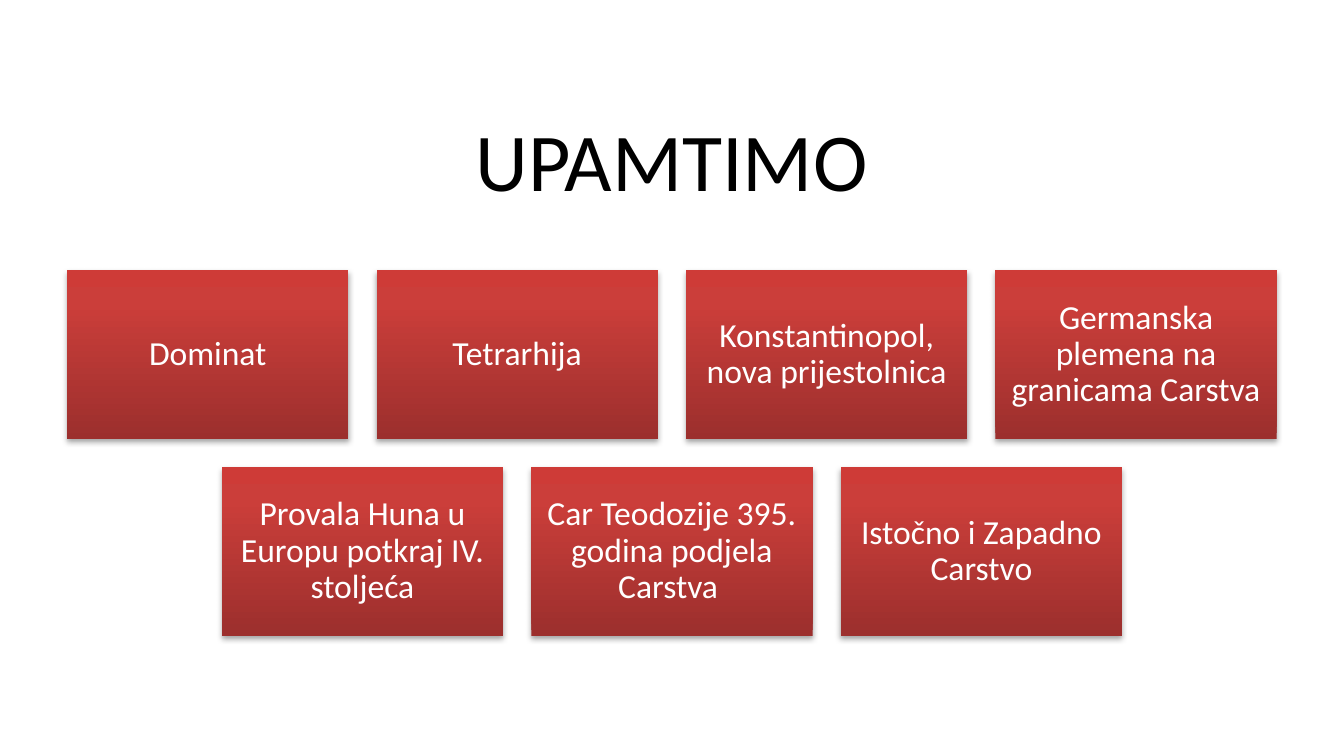
from dataclasses import dataclass

from pptx import Presentation
from pptx.dml.color import RGBColor
from pptx.enum.shapes import MSO_SHAPE
from pptx.enum.text import MSO_ANCHOR, PP_ALIGN
from pptx.oxml import parse_xml
from pptx.oxml.ns import nsdecls
from pptx.shapes.autoshape import Shape
from pptx.slide import Slide
from pptx.util import Inches, Pt

WIDE = 10
HIGH = WIDE * 9 / 16
EDGE = 0.5
SPAN = WIDE - 2 * EDGE
CARD_W = SPAN / 4.3
CARD_H = 0.6 * CARD_W
GAP = 0.1 * CARD_W
TOP = 2.01
STOPS = [(0, "9C2F2D"), (80, "CB3E3A"), (100, "CE3B37")]


@dataclass
class Card:
    text: str
    left: float
    top: float


def paint(hue: str) -> RGBColor:
    return RGBColor.from_string(hue)


def write(shape: Shape, text: str, size: float, hue: str, inset: float) -> None:
    frame = shape.text_frame
    frame.word_wrap = True
    frame.vertical_anchor = MSO_ANCHOR.MIDDLE
    frame.margin_left = frame.margin_right = Inches(inset)
    frame.margin_top = frame.margin_bottom = Inches(inset)
    line = frame.paragraphs[0]
    line.alignment = PP_ALIGN.CENTER
    line.line_spacing = 0.9
    run = line.add_run()
    run.text = text
    run.font.name = "Calibri"
    run.font.size = Pt(size)
    run.font.color.rgb = paint(hue)


def shade(shape: Shape) -> None:
    stops = "".join(
        f'<a:gs pos="{pos * 1000}"><a:srgbClr val="{paint(hue)}"/></a:gs>'
        for pos, hue in STOPS
    )
    fill = parse_xml(
        f'<a:gradFill {nsdecls("a")} rotWithShape="1"><a:gsLst>{stops}</a:gsLst>'
        '<a:lin ang="16200000" scaled="0"/></a:gradFill>'
    )
    glow = parse_xml(
        f'<a:effectLst {nsdecls("a")}><a:outerShdw blurRad="{Pt(3.1)}" '
        f'dist="{Pt(1.8)}" dir="5400000" rotWithShape="0">'
        f'<a:srgbClr val="{paint("000000")}"><a:alpha val="35000"/></a:srgbClr>'
        "</a:outerShdw></a:effectLst>"
    )
    shape.line.fill.background()
    props = shape.element.spPr
    props.find("{*}prstGeom").addnext(fill)
    props.append(glow)


def draw(slide: Slide, card: Card) -> None:
    shape = slide.shapes.add_shape(
        MSO_SHAPE.RECTANGLE,
        Inches(card.left), Inches(card.top), Inches(CARD_W), Inches(CARD_H),
    )
    shade(shape)
    write(shape, card.text, 18, "FFFFFF", 0.07)


def place(rows: list[list[str]]) -> list[Card]:
    cards = []
    for row, texts in enumerate(rows):
        count = len(texts)
        start = (WIDE - count * CARD_W - (count - 1) * GAP) / 2
        for col, text in enumerate(texts):
            left = start + col * (CARD_W + GAP)
            cards.append(Card(text, left, TOP + row * (CARD_H + GAP)))
    return cards


def main() -> None:
    deck = Presentation()
    deck.slide_width, deck.slide_height = Inches(WIDE), Inches(HIGH)
    slide = deck.slides.add_slide(deck.slide_layouts[6])
    title = slide.shapes.add_textbox(
        Inches(EDGE), Inches(0.84), Inches(SPAN), Inches(0.78)
    )
    write(title, "UPAMTIMO", 44, "000000", 0.05)
    rows = [
        [
            "Dominat",
            "Tetrarhija",
            "Konstantinopol, nova prijestolnica",
            "Germanska plemena na granicama Carstva",
        ],
        [
            "Provala Huna u Europu potkraj IV. stoljeća",
            "Car Teodozije 395. godina podjela Carstva ",
            "Istočno i Zapadno Carstvo",
        ],
    ]
    for card in place(rows):
        draw(slide, card)
    deck.save("out.pptx")


if __name__ == "__main__":
    main()
